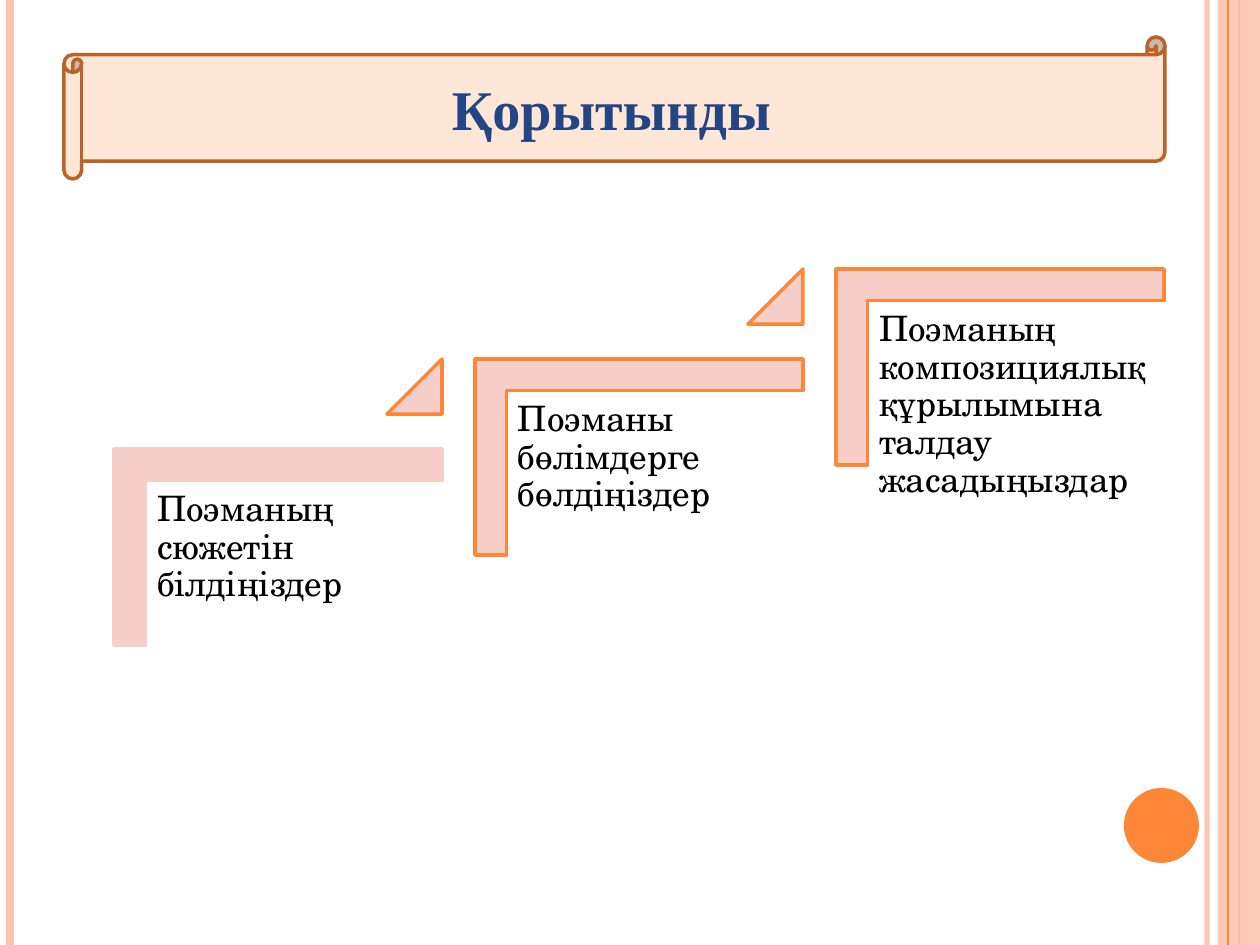
from lxml.etree import SubElement
from pptx import Presentation
from pptx.dml.color import RGBColor
from pptx.enum.shapes import MSO_CONNECTOR as Connector, MSO_SHAPE as Shape
from pptx.enum.text import MSO_ANCHOR as Anchor, PP_ALIGN as Align
from pptx.oxml.ns import qn
from pptx.util import Emu, Pt

PX = 914400 // 126
WIDTH, HEIGHT = 1260, 945
ORANGE, PEACH, PINK = "FE8637", "FEC3AE", "F8CFC8"
STEPS = [
    ("Поэманың сюжетін білдіңіздер", PINK),
    ("Поэманы бөлімдерге бөлдіңіздер", ORANGE),
    ("Поэманың композициялық құрылымына талдау жасадыңыздар", ORANGE),
]


def px(*lengths):
    return [Emu(length * PX) for length in lengths]


def rgb(color):
    return RGBColor.from_string(color)


def set_alpha(element, percent):
    for color in element.iter(qn("a:srgbClr")):
        SubElement(color, qn("a:alpha"), val=str(percent * 1000))


def add_figure(slide, kind, box, fill, line=None):
    figure = slide.shapes.add_shape(kind, *px(*box))
    figure.shadow.inherit = False
    figure.fill.solid()
    figure.fill.fore_color.rgb = rgb(fill)
    if line:
        figure.line.color.rgb = rgb(line)
        figure.line.width = Pt(2)
    else:
        figure.line.fill.background()
    return figure


def add_run(paragraph, text, font, size, color, bold=False):
    run = paragraph.add_run()
    run.text = text
    run.font.name, run.font.size, run.font.bold = font, Pt(size), bold
    run.font.color.rgb = rgb(color)


def add_stripe(slide, x, color, width, alpha=100):
    stripe = slide.shapes.add_connector(Connector.STRAIGHT, *px(x, 0, x, HEIGHT))
    stripe.line.color.rgb = rgb(color)
    stripe.line.width = Pt(width)
    if alpha < 100:
        set_alpha(stripe.line._get_or_add_ln(), alpha)
    SubElement(stripe._element.spPr, qn("a:effectLst"))


def add_frame(slide):
    add_stripe(slide, 1207, PEACH, 3, alpha=93)
    add_stripe(slide, 10, PEACH, 4.5)
    add_stripe(slide, 1239, ORANGE, 1.5)
    band = add_figure(slide, Shape.RECTANGLE, (1218, 0, 42, HEIGHT), PEACH)
    set_alpha(band._element.spPr, 87)
    add_stripe(slide, 1228, ORANGE, 0.75)
    add_figure(slide, Shape.OVAL, (1124, 788, 75, 75), ORANGE)


def add_heading(slide, x, y, w, h):
    add_figure(slide, Shape.HORIZONTAL_SCROLL, (x, y, w, h), "FFE7D7", "BC6329")
    heading = slide.shapes.title
    heading.left, heading.top, heading.width, heading.height = px(
        x + 18, y + 18, w - 42, h - 36)
    # Bring the heading in front of its scroll
    heading._element.getparent().append(heading._element)
    frame = heading.text_frame
    frame.vertical_anchor = Anchor.MIDDLE
    frame.paragraphs[0].alignment = Align.CENTER
    add_run(frame.paragraphs[0], "Қорытынды", "Times New Roman", 32, "244583", True)


def add_step(slide, x, y, w, h, text, outline):
    # Corner, turned a quarter about the middle of the box
    corner_box = (x + (w - h) // 2, y - (w - h) // 2, h, w)
    corner = add_figure(slide, Shape.CORNER, corner_box, PINK, outline)
    corner.rotation = 90
    corner.adjustments[0] = corner.adjustments[1] = 0.161

    caption = slide.shapes.add_textbox(*px(x + 33, y + 32, w - 33, 258))
    frame = caption.text_frame
    frame.word_wrap = True
    (frame.margin_left, frame.margin_top,
     frame.margin_right, frame.margin_bottom) = px(10, 10, 10, 10)
    paragraph = frame.paragraphs[0]
    paragraph.line_spacing = 0.9
    paragraph.space_after = Pt(7)
    add_run(paragraph, text, "TeX Gyre Schola", 20, "000000")


def add_staircase(slide, x, y, w, h):
    pitch, rise, wedge_size = 361, 90, 55
    for i, (text, outline) in enumerate(STEPS):
        left, top = x + i * pitch, y - i * rise
        add_step(slide, left, top, w, h, text, outline)
        # Wedge leading up to the next step
        if i < len(STEPS) - 1:
            wedge_box = (left + w - wedge_size, top - rise, wedge_size, wedge_size)
            wedge = add_figure(slide, Shape.ISOSCELES_TRIANGLE, wedge_box, PINK, ORANGE)
            wedge.adjustments[0] = 1


def main():
    deck = Presentation()
    deck.slide_width, deck.slide_height = px(WIDTH, HEIGHT)
    slide = deck.slides.add_slide(deck.slide_layouts[5])
    add_frame(slide)
    add_heading(slide, 64, 37, 1101, 142)
    add_staircase(slide, 114, 449, 328, 196)
    deck.save("out.pptx")


if __name__ == "__main__":
    main()
